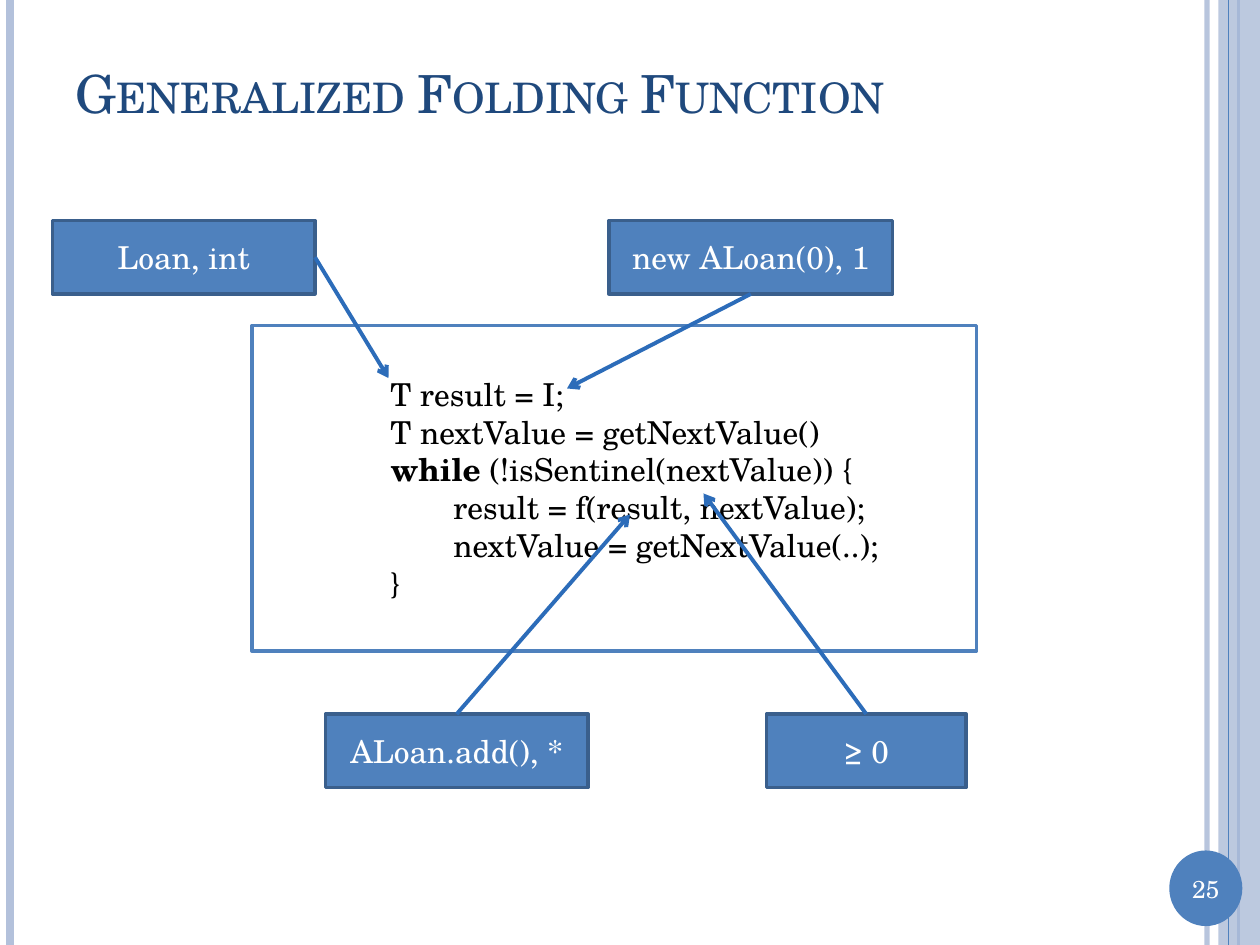
from pptx import Presentation
from pptx.dml.color import RGBColor
from pptx.enum.shapes import MSO_CONNECTOR, MSO_SHAPE
from pptx.enum.text import MSO_ANCHOR, PP_ALIGN
from pptx.oxml.ns import qn
from pptx.util import Inches, Pt
from lxml import etree

LINE = MSO_CONNECTOR.STRAIGHT
RECT, OVAL = MSO_SHAPE.RECTANGLE, MSO_SHAPE.OVAL
MIDDLE = MSO_ANCHOR.MIDDLE
LEFT, CENTER = PP_ALIGN.LEFT, PP_ALIGN.CENTER
TOP_SITE, BOTTOM_SITE, RIGHT_SITE = 0, 2, 3

FONT = "TeX Gyre Schola"
BLUE, PALE, EDGE, ARROW = "4F81BD", "B3C1DB", "3A5F8C", "2C6CB9"
WHITE, BLACK, NAVY = "FFFFFF", "000000", "1F497D"
COLS, ROWS = 120, 90
WIDTH, HEIGHT = Inches(10), Inches(7.5)

RULES = [(9.58, PALE, 3, 93), (0.08, PALE, 4.5, 100), (9.83, BLUE, 1.5, 100)]
CODE = [
    [("T result = I;", False)],
    [("T nextValue = getNextValue()", False)],
    [("while", True), (" (!isSentinel(nextValue)) {", False)],
    [("\tresult = f(result, nextValue);", False)],
    [("\tnextValue = getNextValue(..);", False)],
    [("}", False)],
]
CALLOUTS = [
    ("≥ 0", (73, 68, 19, 7), TOP_SITE, (67, 47)),
    ("ALoan.add(), *", (31, 68, 25, 7), TOP_SITE, (60, 49)),
    ("Loan, int", (5, 21, 25, 7), RIGHT_SITE, (37, 36)),
    ("new ALoan(0), 1", (58, 21, 27, 7), BOTTOM_SITE, (54, 37)),
]


def grid(col, row):
    return round(WIDTH * col / COLS), round(HEIGHT * row / ROWS)


def rgb(value):
    return RGBColor.from_string(value)


def set_attrs(obj, **values):
    for name, value in values.items():
        setattr(obj, name, value)


def paint(fmt, color, alpha=100):
    fmt.solid()
    fmt.fore_color.rgb = rgb(color)
    if alpha < 100:
        clr = fmt._xPr.find(".//" + qn("a:srgbClr"))
        etree.SubElement(clr, qn("a:alpha"), val=str(alpha * 1000))


def add_line(s, start, end, color, width, alpha=100):
    c = s.shapes.add_connector(LINE, *start, *end)
    paint(c.line.fill, color, alpha)
    c.line.width = Pt(width)
    etree.SubElement(c._element.spPr, qn("a:effectLst"))
    return c


def add_rule(s, x, color, width, alpha=100):
    add_line(s, (Inches(x), 0), (Inches(x), HEIGHT), color, width, alpha)


def add_box(s, kind, box, fill, edge=None, alpha=100):
    sp = s.shapes.add_shape(kind, *box)
    sp.shadow.inherit = False
    paint(sp.fill, fill, alpha)
    if edge:
        paint(sp.line.fill, edge)
        sp.line.width = Pt(2)
    else:
        sp.line.fill.background()
    return sp


def write(sp, lines, size=18, color=WHITE, align=CENTER, indent=0):
    tf = sp.text_frame
    set_attrs(tf, word_wrap=True, vertical_anchor=MIDDLE)
    for i, runs in enumerate(lines):
        p = tf.add_paragraph() if i else tf.paragraphs[0]
        p.alignment = align
        if indent:
            pPr = p._p.get_or_add_pPr()
            pPr.set("marL", str(Inches(indent)))
            pPr.set("indent", "0")
        for text, bold in runs:
            r = p.add_run()
            r.text = text
            set_attrs(r.font, name=FONT, size=Pt(size), bold=bold)
            r.font.color.rgb = rgb(color)


def add_text(s, box, text, **style):
    sp = s.shapes.add_textbox(*map(Inches, box))
    write(sp, [[(text, False)]], **style)
    return sp


def add_frame(s):
    for rule in RULES:
        add_rule(s, *rule)
    band = Inches(9.67)
    add_box(s, RECT, (band, 0, WIDTH - band, HEIGHT), PALE, alpha=87)
    add_rule(s, 9.75, BLUE, 0.75)
    add_box(s, OVAL, map(Inches, (9.28, 6.75, 0.58, 0.6)), BLUE)
    add_text(s, (9.28, 6.88, 0.58, 0.34), "25", size=14)


def add_title(s, text):
    sp = add_text(s, (0.5, 0.3, 8.67, 0.87), text, size=30, color=NAVY, align=LEFT)
    sp.text_frame.paragraphs[0].runs[0].font._element.set("cap", "small")


def add_callout(s, text, cells, site, target):
    box = grid(*cells[:2]) + grid(*cells[2:])
    sp = add_box(s, RECT, box, BLUE, EDGE)
    write(sp, [[(text, False)]])
    end = grid(*target)
    c = add_line(s, end, end, ARROW, 2.25)
    c.begin_connect(sp, site)
    etree.SubElement(c.line._get_or_add_ln(), qn("a:tailEnd"), type="arrow")


def main():
    prs = Presentation()
    set_attrs(prs, slide_width=WIDTH, slide_height=HEIGHT)
    s = prs.slides.add_slide(prs.slide_layouts[6])
    add_frame(s)
    add_title(s, "Generalized Folding Function")
    code = add_box(s, RECT, grid(24, 31) + grid(69, 31), WHITE, BLUE)
    write(code, CODE, color=BLACK, align=LEFT, indent=1)
    for callout in CALLOUTS:
        add_callout(s, *callout)
    prs.save("out.pptx")


if __name__ == "__main__":
    main()
